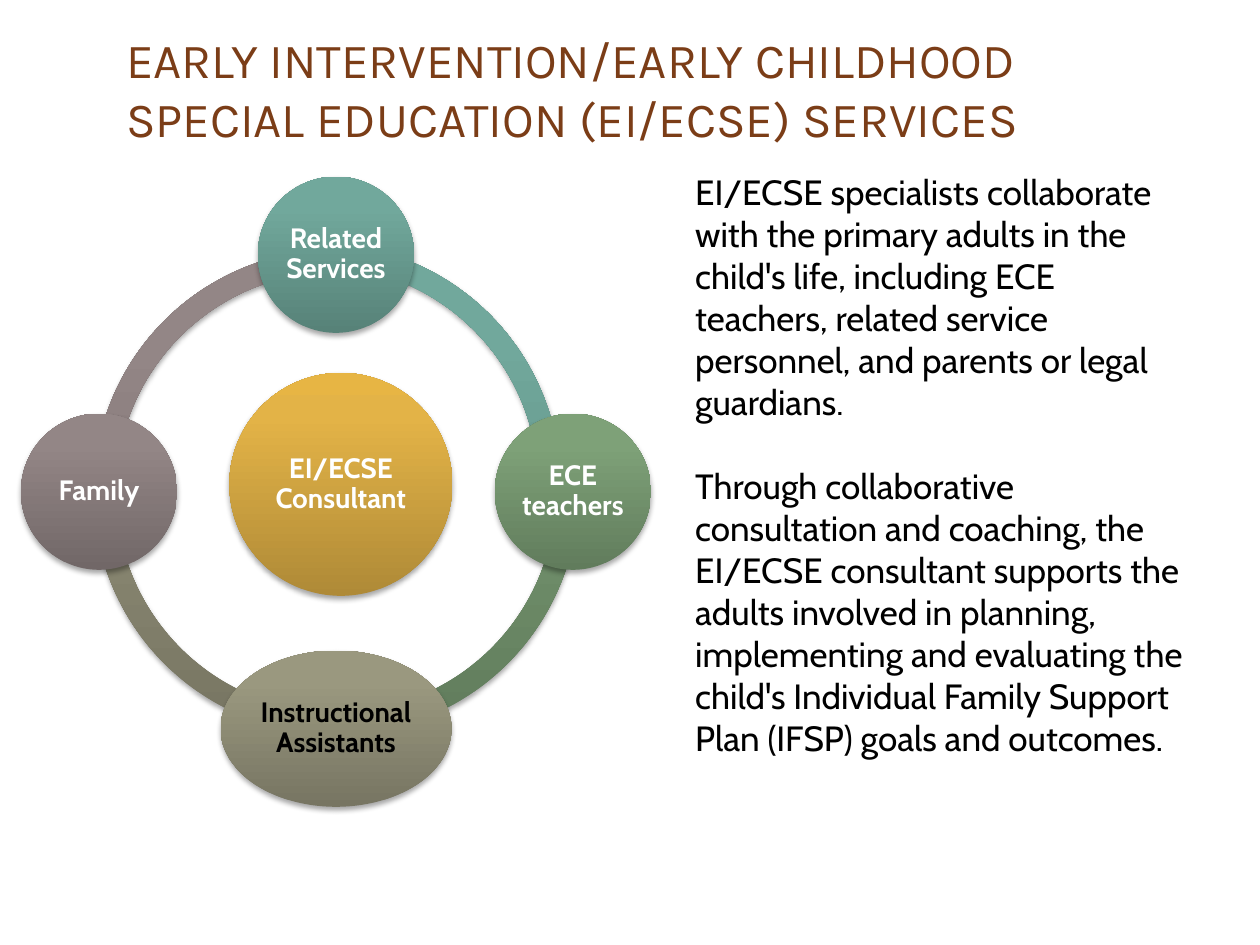
from lxml import etree
from pptx import Presentation
from pptx.dml.color import RGBColor
from pptx.enum import shapes, text
from pptx.oxml import ns
from pptx.util import Pt

TITLE = "EARLY INTERVENTION/EARLY CHILDHOOD SPECIAL EDUCATION (EI/ECSE) SERVICES"
BODY = [
    "EI/ECSE specialists collaborate with the primary adults in the child's life, "
    "including ECE teachers, related service personnel, and parents or legal guardians.",
    "Through collaborative consultation and coaching, the EI/ECSE consultant supports "
    "the adults involved in planning, implementing and evaluating the child's "
    "Individual Family Support Plan (IFSP) goals and outcomes.",
]
GRAY = ("716767", "938686", "948787")
TAN = ("777562", "9A987F", "9B997F")
GREEN = ("617C5C", "7EA178", "7EA378")
TEAL = ("578278", "71A89C", "70AA9D")
GOLD = ("AF8A37", "E3B347", "E7B544")
STOPS = (0, 80, 100)

MID = (192, 281)
REACH = 135.4
RING = 277.2
NODE = 89.3
QUARTER = 54
ARCS = [
    (GRAY, 2, (192, 281.2)),
    (TAN, 1, (192, 281.2)),
    (GREEN, 0, (192, 281.2)),
    (TEAL, 3, (181.8, 277.6)),
]
HUB = ("EI/ECSE Consultant", GOLD, "FFFFFF", (194.8, 276.8), 127.4, 127.4)
NODES = [
    ("Related Services", TEAL, "FFFFFF", (0, -1), NODE),
    ("ECE teachers", GREEN, "FFFFFF", (1, 0), NODE),
    ("Instructional Assistants", TAN, "000000", (0, 1), 132),
    ("Family", GRAY, "FFFFFF", (-1, 0), NODE),
]


def rgb(code):
    return RGBColor.from_string(code)


def write(para, words, face, size, color, bold=False):
    run = para.add_run()
    run.text = words
    run.font.name = face
    run.font.size = Pt(size)
    run.font.bold = bold
    run.font.color.rgb = rgb(color)


def style(shape, tones):
    shape.line.fill.background()
    shape.fill.gradient()
    shape.fill.gradient_angle = 90
    stops = shape.fill._fill._gradFill.find(ns.qn("a:gsLst"))
    for old in list(stops):
        stops.remove(old)
    for pos, tone in zip(STOPS, tones):
        stop = etree.SubElement(stops, ns.qn("a:gs"), pos=str(pos * 1000))
        etree.SubElement(stop, ns.qn("a:srgbClr"), val=tone)
    shape.shadow.inherit = False
    effects = shape._element.spPr.find(ns.qn("a:effectLst"))
    shade = etree.SubElement(
        effects, ns.qn("a:outerShdw"), blurRad=str(Pt(3.1)), dist=str(Pt(1.8)),
        dir="5400000", rotWithShape="0")
    color = etree.SubElement(shade, ns.qn("a:srgbClr"), val="000000")
    etree.SubElement(color, ns.qn("a:alpha"), val="35000")


def place(slide, kind, mid, wide, high, tones):
    x, y = mid
    shape = slide.shapes.add_shape(
        kind, Pt(x - wide / 2), Pt(y - high / 2), Pt(wide), Pt(high))
    style(shape, tones)
    return shape


def add_node(slide, words, tones, color, mid, wide, high):
    shape = place(slide, shapes.MSO_SHAPE.OVAL, mid, wide, high, tones)
    frame = shape.text_frame
    frame.word_wrap = True
    frame.vertical_anchor = text.MSO_ANCHOR.MIDDLE
    frame.margin_left = frame.margin_right = Pt(1.5)
    frame.margin_top = frame.margin_bottom = Pt(1.5)
    para = frame.paragraphs[0]
    para.alignment = text.PP_ALIGN.CENTER
    para.line_spacing = 0.9
    write(para, words, "Cabin", 16, color, True)


def add_title(slide):
    title = slide.shapes.title
    title.left, title.top, title.width, title.height = map(Pt, (64.8, 28.8, 592, 43.2))
    frame = title.text_frame
    frame.word_wrap = True
    frame.auto_size = text.MSO_AUTO_SIZE.NONE
    frame.vertical_anchor = text.MSO_ANCHOR.MIDDLE
    para = frame.paragraphs[0]
    para.alignment = text.PP_ALIGN.LEFT
    write(para, TITLE, "Karla", 28, "7B3D17")


def add_body(slide):
    box = slide.shapes.add_textbox(*map(Pt, (390.2, 93.6, 300.2, 346.3)))
    frame = box.text_frame
    frame.word_wrap = True
    frame.auto_size = text.MSO_AUTO_SIZE.SHAPE_TO_FIT_TEXT
    for i, words in enumerate(BODY):
        para = frame.add_paragraph() if i else frame.paragraphs[0]
        para.space_after = Pt(24 if i < len(BODY) - 1 else 0)
        write(para, words, "Cabin", 20, "000000")


def main():
    deck = Presentation()
    deck.slide_width, deck.slide_height = Pt(720), Pt(540)
    slide = deck.slides.add_slide(deck.slide_layouts[5])
    add_title(slide)
    add_body(slide)
    for tones, turn, mid in ARCS:
        arc = place(slide, shapes.MSO_SHAPE.BLOCK_ARC, mid, RING, RING, tones)
        arc.adjustments[0] = turn * QUARTER
        arc.adjustments[1] = (turn + 1) % 4 * QUARTER
        arc.adjustments[2] = 0.046
    add_node(slide, *HUB)
    for words, tones, color, (dx, dy), wide in NODES:
        mid = (MID[0] + dx * REACH, MID[1] + dy * REACH)
        add_node(slide, words, tones, color, mid, wide, NODE)
    deck.save("out.pptx")


if __name__ == "__main__":
    main()
